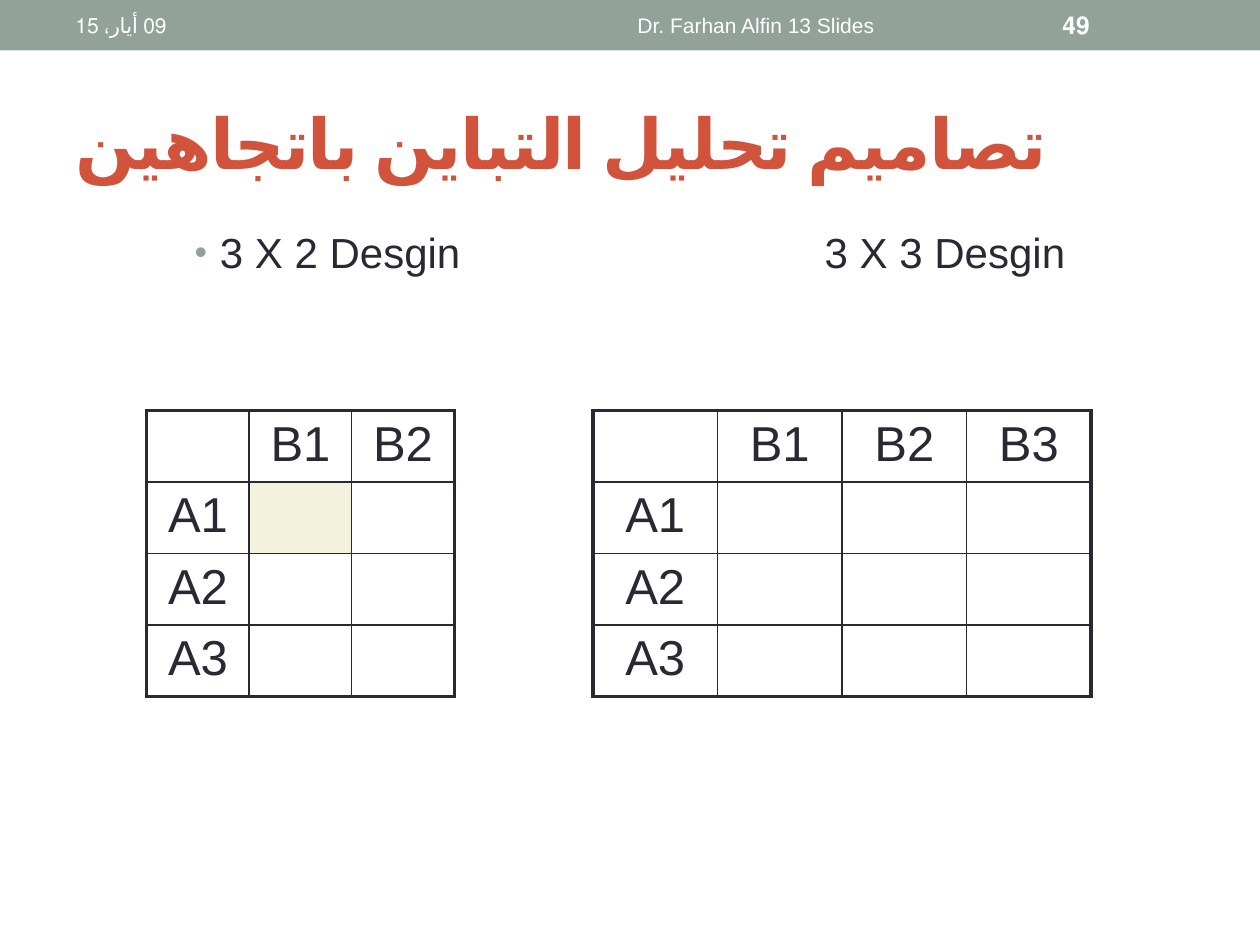
from lxml import etree
from pptx import Presentation
from pptx.dml.color import RGBColor
from pptx.enum.lang import MSO_LANGUAGE_ID
from pptx.enum.shapes import MSO_SHAPE
from pptx.enum.text import MSO_ANCHOR, PP_ALIGN
from pptx.oxml.ns import qn
from pptx.util import Pt

RECTANGLE = MSO_SHAPE.RECTANGLE
TOP, MIDDLE = MSO_ANCHOR.TOP, MSO_ANCHOR.MIDDLE
LEFT, CENTER = PP_ALIGN.LEFT, PP_ALIGN.CENTER
ARABIC = MSO_LANGUAGE_ID.ARABIC_SYRIA
COLORS = {
    "band": "93A299",
    "title": "D2533C",
    "ink": "292934",
    "highlight": "F3F2DC",
    "white": "FFFFFF",
}
FONT = "Arial"
THICK, THIN = 2.25, 1


def add_element(parent, tag, **attributes):
    element = etree.SubElement(parent, qn(tag))
    for name, value in attributes.items():
        element.set(name, str(value))
    return element


class SlideWriter:
    def __init__(self, slide):
        self.slide = slide

    def color(self, name):
        return RGBColor.from_string(COLORS[name])

    def style(self, para, size, color, bold=False, align=LEFT, rtl=True, spacing=0):
        para.alignment = align
        if rtl:
            para._p.get_or_add_pPr().set("rtl", "1")
        for span in para.runs:
            span.font.name = FONT
            span.font.size = Pt(size)
            span.font.bold = bold
            span.font.color.rgb = self.color(color)
            if rtl:
                span.font.language_id = ARABIC
            if spacing:
                span._r.get_or_add_rPr().set("spc", str(int(spacing * 100)))

    def space_before(self, para, percent):
        spacing = add_element(para._p.get_or_add_pPr(), "a:spcBef")
        add_element(spacing, "a:spcPct", val=percent * 1000)

    def band(self, left, top, width, height, color):
        shape = self.slide.shapes.add_shape(
            RECTANGLE, Pt(left), Pt(top), Pt(width), Pt(height))
        shape.shadow.inherit = False
        shape.fill.solid()
        shape.fill.fore_color.rgb = self.color(color)
        shape.line.fill.background()

    def text(self, text, left, top, width, height, size, color, anchor=MIDDLE, **style):
        box = self.slide.shapes.add_textbox(Pt(left), Pt(top), Pt(width), Pt(height))
        frame = box.text_frame
        frame.word_wrap = True
        frame.vertical_anchor = anchor
        frame.text = text
        para = frame.paragraphs[0]
        self.style(para, size, color, **style)
        return para

    def bullet(self, para, color, indent, tab_size):
        self.space_before(para, 20)
        properties = para._p.get_or_add_pPr()
        properties.set("marL", str(Pt(indent)))
        properties.set("indent", str(-Pt(indent)))
        properties.set("defTabSz", str(Pt(tab_size)))
        bullet_color = add_element(properties, "a:buClr")
        add_element(bullet_color, "a:srgbClr", val=COLORS[color])
        add_element(properties, "a:buSzPct", val=85000)
        add_element(properties, "a:buFont", typeface=FONT)
        add_element(properties, "a:buChar", char="•")

    def borders(self, cell, outer_sides):
        properties = cell._tc.get_or_add_tcPr()
        for index, (side, outer) in enumerate(outer_sides.items()):
            width = Pt(THICK if outer else THIN)
            line = etree.Element(qn(f"a:ln{side}"), w=str(width))
            fill = add_element(line, "a:solidFill")
            add_element(fill, "a:srgbClr", val=COLORS["ink"])
            properties.insert(index, line)

    def design_table(self, row_names, column_names, left, top, column_width, row_height,
                     highlighted=None):
        rows, columns = len(row_names) + 1, len(column_names) + 1
        frame = self.slide.shapes.add_table(
            rows, columns, Pt(left), Pt(top),
            Pt(column_width * columns), Pt(row_height * rows))
        table = frame.table
        table.first_row = table.horz_banding = False
        for column in table.columns:
            column.width = Pt(column_width)
        for row in table.rows:
            row.height = Pt(row_height)
        labels = {(0, i): name for i, name in enumerate(column_names, 1)}
        labels.update({(i, 0): name for i, name in enumerate(row_names, 1)})
        for row in range(rows):
            for column in range(columns):
                cell = table.cell(row, column)
                if (row, column) == highlighted:
                    cell.fill.solid()
                    cell.fill.fore_color.rgb = self.color("highlight")
                else:
                    cell.fill.background()
                self.borders(cell, {"L": column == 0, "R": column == columns - 1,
                                    "T": row == 0, "B": row == rows - 1})
                if (row, column) in labels:
                    cell.text_frame.text = labels[row, column]
                    para = cell.text_frame.paragraphs[0]
                    self.style(para, 28, "ink", align=CENTER)
                    self.space_before(para, 20)


def main():
    deck = Presentation()
    deck.slide_width, deck.slide_height = Pt(720), Pt(540)
    page = SlideWriter(deck.slides.add_slide(deck.slide_layouts[6]))

    page.band(0, 0, 720, 28.8, "band")
    page.text("تصاميم تحليل التباين باتجاهين", 36, 41.8, 648, 77.8, 40, "title",
              bold=True, spacing=-1)
    designs = page.text("3 X 2 Desgin\t\t\t3 X 3 Desgin", 36, 126, 648, 383.8, 24, "ink",
                        anchor=TOP, align=CENTER, rtl=False)
    page.bullet(designs, "band", 14.4, 72)

    page.text("09 أيار، 15", 36, 1.4, 228, 26, 12, "white")
    page.text("Dr. Farhan Alfin 13 Slides", 270, 1.4, 324, 26, 12, "white", align=CENTER)
    page.text("49", 600, 1.4, 84, 26, 14, "white", bold=True)

    factor_a = ["A1", "A2", "A3"]
    factor_b = ["B1", "B2", "B3"]
    page.design_table(factor_a, factor_b[:2], 83.8, 234.7, 58.6, 40.8, highlighted=(1, 1))
    page.design_table(factor_a, factor_b, 338.8, 234.7, 71.2, 40.8)

    deck.save("out.pptx")


if __name__ == "__main__":
    main()
